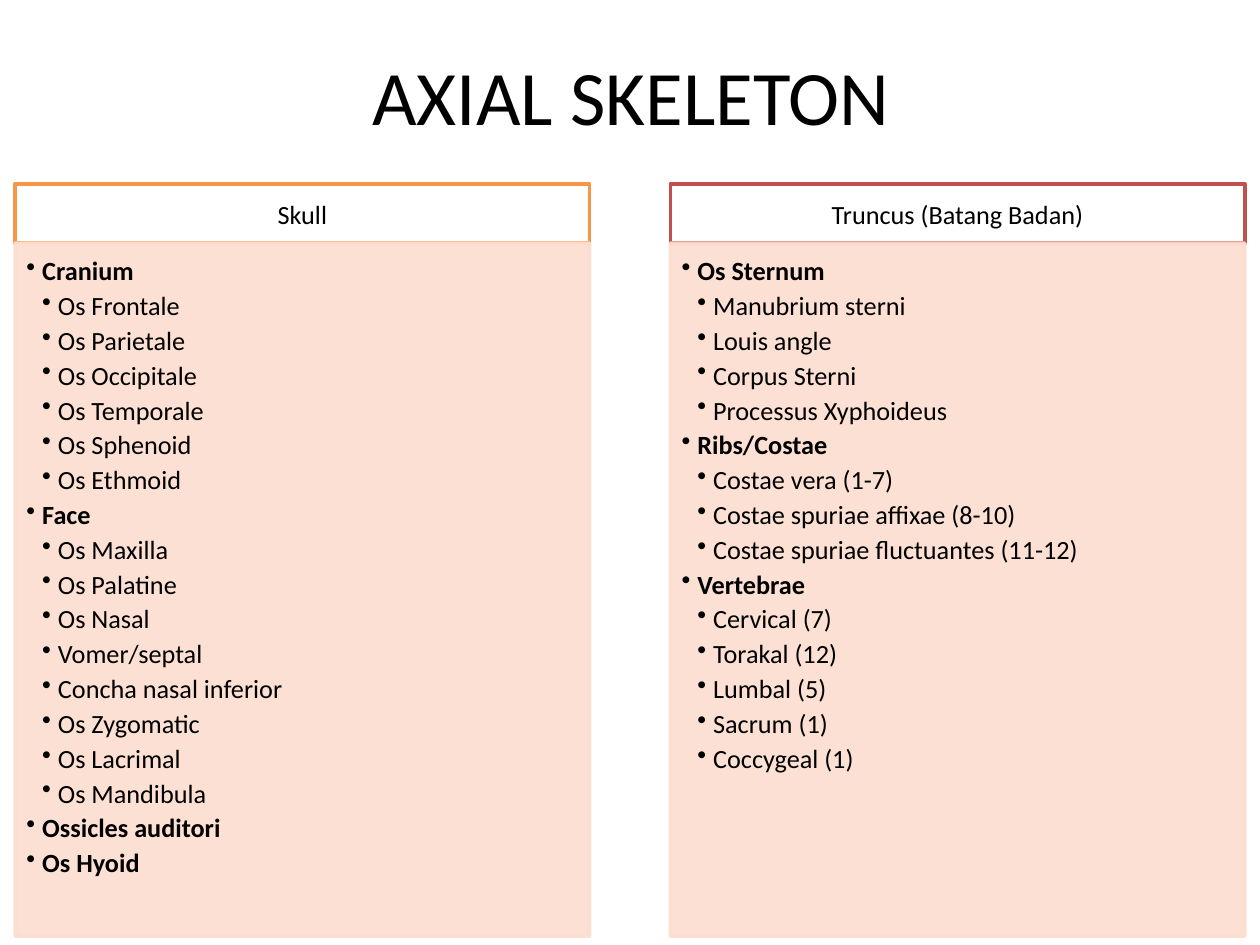
from dataclasses import dataclass

from lxml.etree import SubElement
from pptx import Presentation
from pptx.dml.color import RGBColor
from pptx.enum.shapes import MSO_SHAPE
from pptx.enum.text import MSO_ANCHOR, PP_ALIGN
from pptx.oxml.ns import qn
from pptx.util import Inches, Pt


@dataclass(frozen=True)
class Theme:
    font: str = "Calibri"
    text: RGBColor = RGBColor(0x00, 0x00, 0x00)
    header: RGBColor = RGBColor(0xFF, 0xFF, 0xFF)
    body: RGBColor = RGBColor(0xFC, 0xDD, 0xCF)
    skull: RGBColor = RGBColor(0xF7, 0x96, 0x46)
    trunk: RGBColor = RGBColor(0xC0, 0x50, 0x4D)
    title_size: Pt = Pt(44)
    text_size: Pt = Pt(15)
    line_width: Pt = Pt(2)
    body_opacity: int = 90


theme = Theme()

COLUMNS = [
    ("Skull", theme.skull, {
        "Cranium": ["Os Frontale", "Os Parietale", "Os Occipitale",
                    "Os Temporale", "Os Sphenoid", "Os Ethmoid"],
        "Face": ["Os Maxilla", "Os Palatine", "Os Nasal", "Vomer/septal",
                 "Concha nasal inferior", "Os Zygomatic", "Os Lacrimal",
                 "Os Mandibula"],
        "Ossicles auditori": [],
        "Os Hyoid": [],
    }),
    ("Truncus (Batang Badan)", theme.trunk, {
        "Os Sternum": ["Manubrium sterni", "Louis angle", "Corpus Sterni",
                       "Processus Xyphoideus"],
        "Ribs/Costae": ["Costae vera (1-7)", "Costae spuriae affixae (8-10)",
                        "Costae spuriae fluctuantes (11-12)"],
        "Vertebrae": ["Cervical (7)", "Torakal (12)", "Lumbal (5)",
                      "Sacrum (1)", "Coccygeal (1)"],
    }),
]
LEFT, STEP, WIDTH = 0.12, 5.2, 4.56
HEADER_TOP, HEADER_HEIGHT, BODY_HEIGHT = 1.46, 0.47, 5.5
BULLET_INDENT = 0.125


def add_panel(left, top, height, fill, line, margins, anchor):
    panel = slide.shapes.add_shape(MSO_SHAPE.RECTANGLE, Inches(left), Inches(top),
                                   Inches(WIDTH), Inches(height))
    panel.shadow.inherit = False
    panel.fill.solid()
    panel.fill.fore_color.rgb = fill
    panel.line.color.rgb = line
    panel.line.width = theme.line_width
    frame = panel.text_frame
    frame.word_wrap = True
    frame.vertical_anchor = anchor
    for side, margin in zip(("left", "top", "right", "bottom"), margins):
        setattr(frame, f"margin_{side}", Inches(margin))
    return panel


def write(paragraph, text, size, bold=False, alignment=PP_ALIGN.LEFT):
    paragraph.alignment = alignment
    run = paragraph.add_run()
    run.text = text
    font_format = {"name": theme.font, "size": size, "bold": bold}
    for name, value in font_format.items():
        setattr(run.font, name, value)
    run.font.color.rgb = theme.text


presentation = Presentation()
presentation.slide_width = Inches(10)
presentation.slide_height = Inches(7.5)
slide = presentation.slides.add_slide(presentation.slide_layouts[5])

title = slide.shapes.title
title_box = {"left": 0.51, "top": 0.13, "width": 9, "height": 1.25}
for name, value in title_box.items():
    setattr(title, name, Inches(value))
title.text_frame.vertical_anchor = MSO_ANCHOR.MIDDLE
write(title.text_frame.paragraphs[0], "AXIAL SKELETON", theme.title_size,
      alignment=PP_ALIGN.CENTER)

for index, (heading, accent, groups) in enumerate(COLUMNS):
    left = LEFT + index * STEP
    header = add_panel(left, HEADER_TOP, HEADER_HEIGHT, theme.header, accent,
                       (0.12, 0.07, 0.12, 0.07), MSO_ANCHOR.MIDDLE)
    write(header.text_frame.paragraphs[0], heading, theme.text_size,
          alignment=PP_ALIGN.CENTER)

    body = add_panel(left, HEADER_TOP + HEADER_HEIGHT, BODY_HEIGHT, theme.body,
                     theme.body, (0.09, 0.09, 0.12, 0.13), MSO_ANCHOR.TOP)
    for color in body._element.spPr.iter(qn("a:srgbClr")):
        SubElement(color, qn("a:alpha"), val=str(theme.body_opacity * 1000))

    lines = []
    for group, bones in groups.items():
        lines.append((0, group))
        lines.extend((1, bone) for bone in bones)

    frame = body.text_frame
    for number, (level, text) in enumerate(lines):
        paragraph = frame.add_paragraph() if number else frame.paragraphs[0]
        paragraph.level = level
        paragraph.space_after = Pt(1.9)
        write(paragraph, text, theme.text_size, bold=level == 0)
        properties = paragraph._p.get_or_add_pPr()
        properties.set("marL", str(Inches(BULLET_INDENT * (level + 1))))
        properties.set("indent", str(Inches(-BULLET_INDENT)))
        SubElement(properties, qn("a:buChar"), char="•")

presentation.save("out.pptx")
